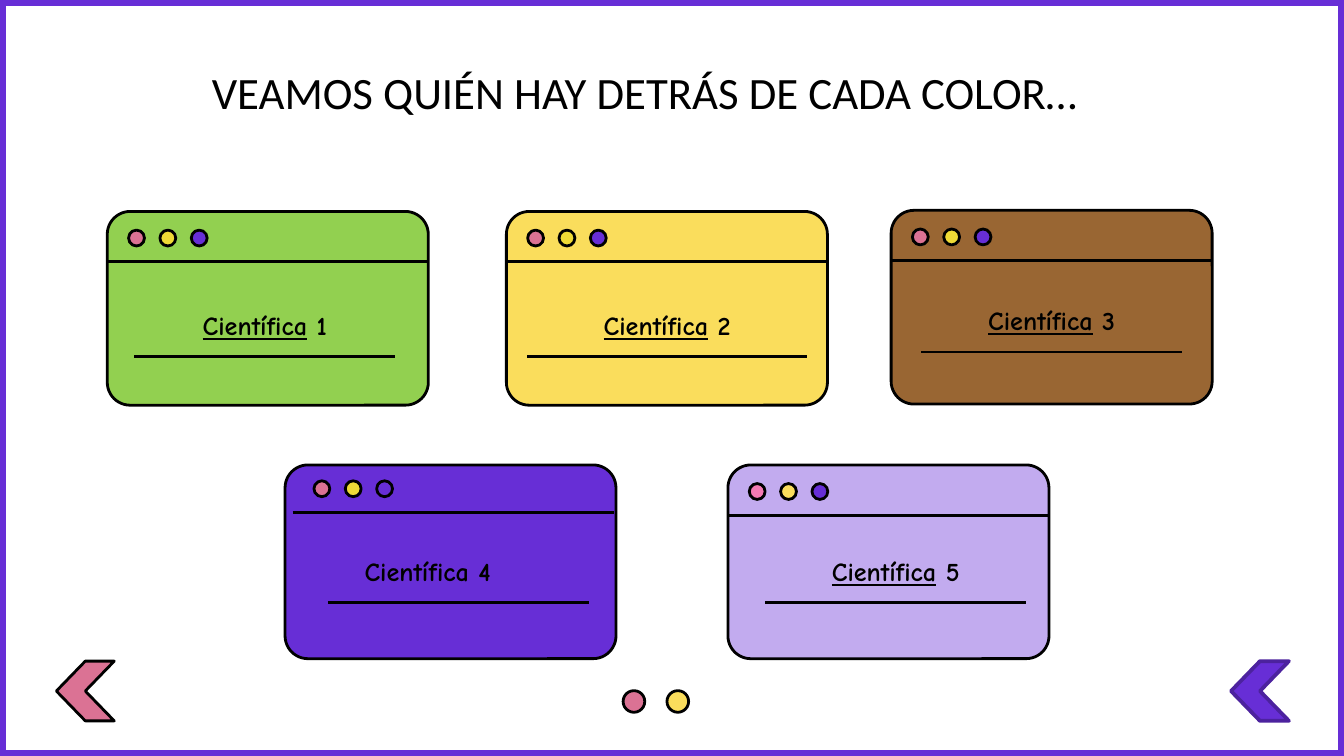
from lxml import etree
from pptx import Presentation
from pptx.dml.color import RGBColor
from pptx.enum.shapes import MSO_CONNECTOR, MSO_SHAPE
from pptx.enum.text import MSO_ANCHOR, PP_ALIGN
from pptx.oxml import parse_xml
from pptx.oxml.ns import qn
from pptx.util import Pt

RECT = MSO_SHAPE.RECTANGLE
ROUNDED = MSO_SHAPE.ROUNDED_RECTANGLE
OVAL = MSO_SHAPE.OVAL
CHEVRON = MSO_SHAPE.CHEVRON
STRAIGHT = MSO_CONNECTOR.STRAIGHT
MIDDLE = MSO_ANCHOR.MIDDLE
CENTER = PP_ALIGN.CENTER
LEFT = PP_ALIGN.LEFT

color = RGBColor.from_string
BLACK, PINK, PURPLE = "000000", "DB7294", "672ED6"
YELLOW, GOLD = "EEDA36", "FADD5C"
A_NS = "http://schemas.openxmlformats.org/drawingml/2006/main"


def add_shape(kind, x, y, w, h, fill=None, line=BLACK, width=1.5):
    s = slide.shapes.add_shape(kind, Pt(x), Pt(y), Pt(w), Pt(h))
    s.shadow.inherit = False
    if fill:
        s.fill.solid()
        s.fill.fore_color.rgb = color(fill)
    else:
        s.fill.background()
    s.line.color.rgb = color(line)
    s.line.width = Pt(width)
    return s


def add_line(x1, x2, y):
    c = slide.shapes.add_connector(STRAIGHT, Pt(x1), Pt(y), Pt(x2), Pt(y))
    c.line.color.rgb = color(BLACK)
    c.line.width = Pt(1.5)
    etree.SubElement(c._element.spPr, qn("a:effectLst"))


prs = Presentation()
prs.slide_width, prs.slide_height = Pt(720), Pt(405)
slide = prs.slides.add_slide(prs.slide_layouts[6])

# Title
s = slide.shapes.add_textbox(Pt(52.6), Pt(26.6), Pt(585.4), Pt(45.4))
tf = s.text_frame
tf.word_wrap = True
tf.vertical_anchor = MIDDLE
p = tf.paragraphs[0]
p.text = "VEAMOS QUIÉN HAY DETRÁS DE CADA COLOR…"
p.alignment = CENTER
p.font.name, p.font.size = "Calibri", Pt(24)
p.font.color.rgb = color(BLACK)

# Cards: x, y, width, fill, first dot offset, rule start and y offset, dots
DOTS = (PINK, YELLOW, PURPLE)
cards = [
    (57.5, 113.3, 172, "92D050", 11.4, 10, 0, 27, DOTS),
    (271.3, 113.3, 172, GOLD, 11.4, 10, 0, 27, DOTS),
    (477.4, 112.7, 172, "996633", 11.4, 10, 0, 27, DOTS),
    (152.7, 249.1, 177.3, PURPLE, 15.5, 8.5, 4, 25.4, DOTS),
    (390, 249.1, 172, "C2ABEF", 11.4, 10, 0, 27, ("F47AB3", GOLD, PURPLE)),
]
for x, y, w, fill, dot_x, dot_y, rule_x, rule_y, dots in cards:
    s = add_shape(ROUNDED, x, y, w, 103.8, fill)
    s.adjustments[0] = 0.118
    for i, dot in enumerate(dots):
        add_shape(OVAL, x + dot_x + 16.8 * i, y + dot_y, 8.5, 8.5, dot)
    add_line(x + rule_x, x + rule_x + 172, y + rule_y)
    if fill == PURPLE:  # this card holds its own label
        tf = s.text_frame
        tf.vertical_anchor = MIDDLE
        tf.margin_left, tf.margin_top, tf.margin_bottom = Pt(39), Pt(17), Pt(7)
        p = tf.paragraphs[0]
        p.text = "Científica 4"
        p.alignment = LEFT
        p.font.name, p.font.size, p.font.bold = "Comic Neue", Pt(14), True
        p.font.color.rgb = color(BLACK)
add_line(175.7, 315.4, 322.9)

# Underlined label tables: number, x, y, width
labels = [(1, 72, 159.8, 139.7), (2, 282.5, 159.8, 149.8),
          (3, 493.5, 157.2, 139.7), (5, 410, 291.6, 139.7)]
for number, x, y, w in labels:
    s = slide.shapes.add_table(1, 1, Pt(x), Pt(y), Pt(w), Pt(30.5))
    s.table.first_row = s.table.horz_banding = False
    cell = s.table.cell(0, 0)
    cell.margin_left = cell.margin_right = Pt(7.2)
    cell.margin_top = cell.margin_bottom = Pt(7.2)
    cell.fill.background()
    p = cell.text_frame.paragraphs[0]
    p.alignment = CENTER
    p.font.name, p.font.size, p.font.bold = "Comic Neue", Pt(14), True
    p.font.color.rgb = color(BLACK)
    r = p.add_run()
    r.text = "Científica"
    r.font.underline = True
    r = p.add_run()
    r.text = f" {number}"
    # Only the bottom border shows
    tcPr = cell._tc.get_or_add_tcPr()
    for i, side in enumerate("LRTB"):
        paint = "<a:noFill/>"
        if side == "B":
            paint = f'<a:solidFill><a:srgbClr val="{BLACK}"/></a:solidFill>'
        tcPr.insert(i, parse_xml(
            f'<a:ln{side} xmlns:a="{A_NS}" w="{Pt(1.5)}">{paint}</a:ln{side}>'))

# Bottom dots
for x, fill in ((333.8, PINK), (357.3, GOLD)):
    add_shape(OVAL, x, 370, 11.6, 11.6, fill)

# Navigation arrows
for x, fill, line, width in ((30.2, PINK, BLACK, 1.5),
                             (659.5, PURPLE, "4C229E", 2)):
    s = add_shape(CHEVRON, x, 354.2, 31, 32, fill, line, width)
    s.rotation = 180

# Slide frame
add_shape(RECT, 0, 0, 720, 405, line=PURPLE, width=6)

prs.save("out.pptx")
